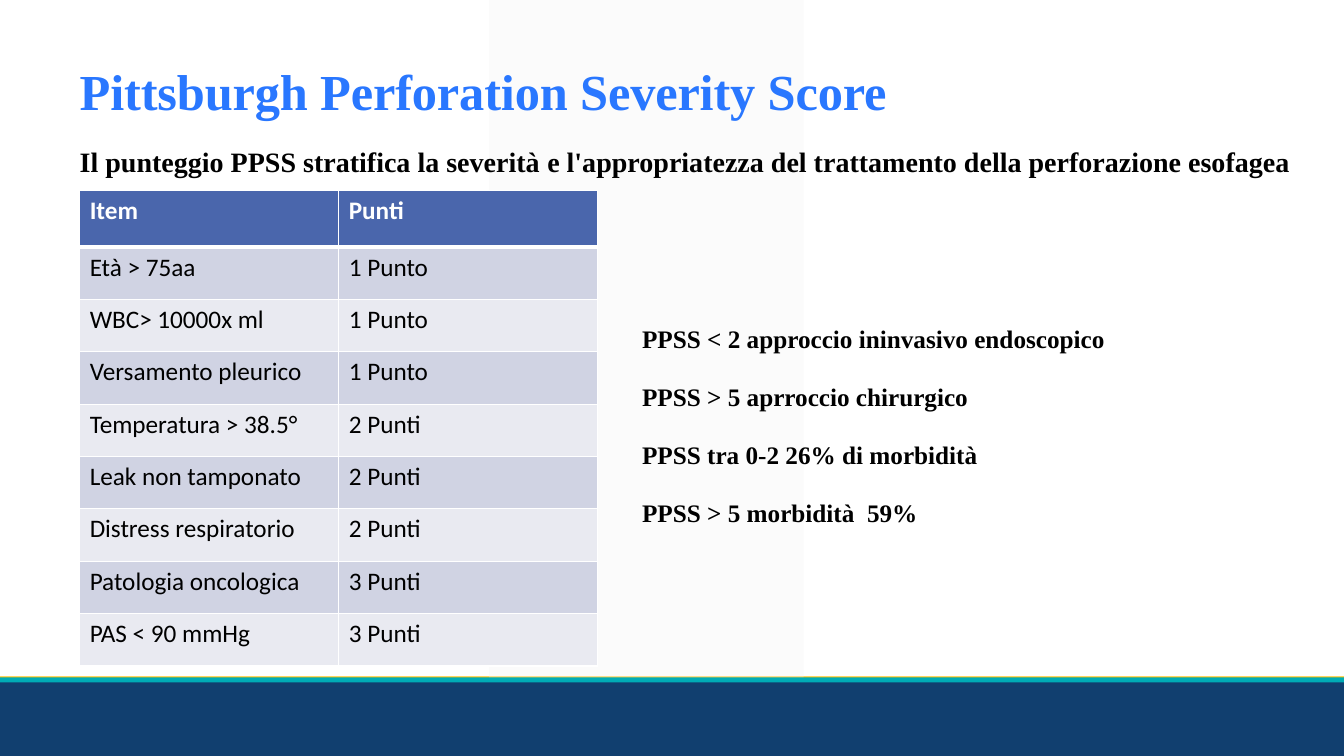
from lxml import etree
from pptx import Presentation
from pptx.dml.color import RGBColor
from pptx.enum.shapes import MSO_SHAPE
from pptx.enum.text import MSO_ANCHOR, MSO_AUTO_SIZE, PP_ALIGN
from pptx.oxml.ns import qn
from pptx.util import Inches, Pt

RECTANGLE = MSO_SHAPE.RECTANGLE
TOP, LEFT, GROW = MSO_ANCHOR.TOP, PP_ALIGN.LEFT, MSO_AUTO_SIZE.SHAPE_TO_FIT_TEXT
TITLE_ONLY = 5
WIDTH, HEIGHT = 13.33, 7.5
MARGIN = 0.79
FOOTER_TOP = 0.9 * HEIGHT
SERIF, SANS = "Times New Roman", "Calibri"
WHITE, BLACK = "FFFFFF", "000000"
LINE_PITCH = 41.4

SCORES = [
    ("Item", "Punti"),
    ("Età > 75aa", "1 Punto"),
    ("WBC> 10000x ml", "1 Punto"),
    ("Versamento pleurico", "1 Punto"),
    ("Temperatura > 38.5°", "2 Punti"),
    ("Leak non tamponato", "2 Punti"),
    ("Distress respiratorio", "2 Punti"),
    ("Patologia oncologica", "3 Punti"),
    ("PAS < 90 mmHg", "3 Punti"),
]
# Each span: text, size, colour, letter spacing in hundredths of a point
HEADING = [
    [("Pittsburgh Perforation Severity Score", 36, "2977FF", -10)],
    [("Il punteggio PPSS stratifica la severità ", 20, BLACK, 0),
     ("e ", 20, BLACK, -10),
     ("l'appropriatezza del trattamento della perforazione esofagea", 20, BLACK, 0)],
]
FINDINGS = [
    [(text, 18, BLACK, 0)] for text in (
        "PPSS < 2 approccio ininvasivo endoscopico",
        "PPSS > 5 aprroccio chirurgico",
        "PPSS tra 0-2 26% di morbidità",
        "PPSS > 5 morbidità  59%",
    )
]


def color(value):
    return RGBColor.from_string(value)


def add_span(para, text, size, fill, font, bold, spacing=0):
    span = para.add_run()
    span.text = text
    span.font.size, span.font.name, span.font.bold = Pt(size), font, bold
    span.font.color.rgb = color(fill)
    if spacing:
        span.font._element.set("spc", str(spacing))


def place(shape, box):
    shape.left, shape.top, shape.width, shape.height = map(Inches, box)


def write_lines(shape, box, lines):
    """Fill a shape with bold serif lines at a fixed pitch."""
    frame = shape.text_frame
    frame.word_wrap, frame.vertical_anchor, frame.auto_size = True, TOP, GROW
    for index, line in enumerate(lines):
        para = frame.add_paragraph() if index else frame.paragraphs[0]
        para.alignment, para.line_spacing = LEFT, Pt(LINE_PITCH)
        for text, size, fill, spacing in line:
            add_span(para, text, size, fill, SERIF, True, spacing)
    place(shape, box)


def add_block(page, box, fill, opacity=None):
    block = page.shapes.add_shape(RECTANGLE, *map(Inches, box))
    block.shadow.inherit = False
    block.fill.solid()
    block.fill.fore_color.rgb = color(fill)
    block.line.fill.background()
    if opacity is not None:
        tint = block._element.spPr.find(".//" + qn("a:srgbClr"))
        etree.SubElement(tint, qn("a:alpha")).set("val", str(opacity * 1000))
    return block


def add_backdrop(page, footer_top):
    """Footer band with two stripes on its edge, and a pale centre panel."""
    stripe = 0.05
    blocks = [
        add_block(page, (0, footer_top - 0.04, WIDTH, stripe), "FFC000"),
        add_block(page, (0, footer_top, WIDTH, HEIGHT - footer_top), "113F6F"),
        add_block(page, (4.85, 0, 3.12, footer_top), "F2F2F2", 30),
        add_block(page, (0, footer_top - 0.03, WIDTH, stripe), "00ACB6"),
    ]
    # Keep the title in front of the backdrop
    tree = page.shapes._spTree
    for index, block in enumerate(blocks):
        tree.insert(2 + index, block._element)


def add_heading(page, box):
    title = page.shapes.title
    frame = title.text_frame
    frame.margin_left = frame.margin_right = frame.margin_top = 0
    frame.margin_bottom = Inches(0.05)
    write_lines(title, box, HEADING)


def set_borders(cell, bottom):
    props = cell._tc.get_or_add_tcPr()
    for side, points in (("L", 1), ("R", 1), ("T", 1), ("B", bottom)):
        line = etree.SubElement(props, qn("a:ln" + side), w=str(Pt(points)))
        fill = etree.SubElement(line, qn("a:solidFill"))
        etree.SubElement(fill, qn("a:srgbClr"), val=WHITE)


def add_score_table(page, box):
    table = page.shapes.add_table(len(SCORES), 2, *map(Inches, box)).table
    header_height = 0.56
    row_height = (box[3] - header_height) / (len(SCORES) - 1)
    for r, values in enumerate(SCORES):
        header = r == 0
        table.rows[r].height = Inches(header_height if header else row_height)
        row_fill = "4A66AC" if header else ("E9EAF1", "D0D3E3")[r % 2]
        for c, text in enumerate(values):
            cell = table.cell(r, c)
            set_borders(cell, 3 if header else 1)
            cell.fill.solid()
            cell.fill.fore_color.rgb = color(row_fill)
            add_span(cell.text_frame.paragraphs[0], text, 18,
                     WHITE if header else BLACK, SANS, header)


def add_findings(page, box):
    write_lines(page.shapes.add_textbox(*map(Inches, box)), box, FINDINGS)


def main():
    deck = Presentation()
    deck.slide_width, deck.slide_height = Inches(WIDTH), Inches(HEIGHT)
    page = deck.slides.add_slide(deck.slide_layouts[TITLE_ONLY])
    page.background.fill.solid()
    page.background.fill.fore_color.rgb = color(WHITE)
    add_backdrop(page, FOOTER_TOP)
    add_heading(page, (MARGIN, 0.62, 12.12, 1.12))
    add_score_table(page, (MARGIN, 1.89, 5.14, 4.72))
    add_findings(page, (6.27, 2.88, 6.78, 2.32))
    deck.save("out.pptx")


if __name__ == "__main__":
    main()
